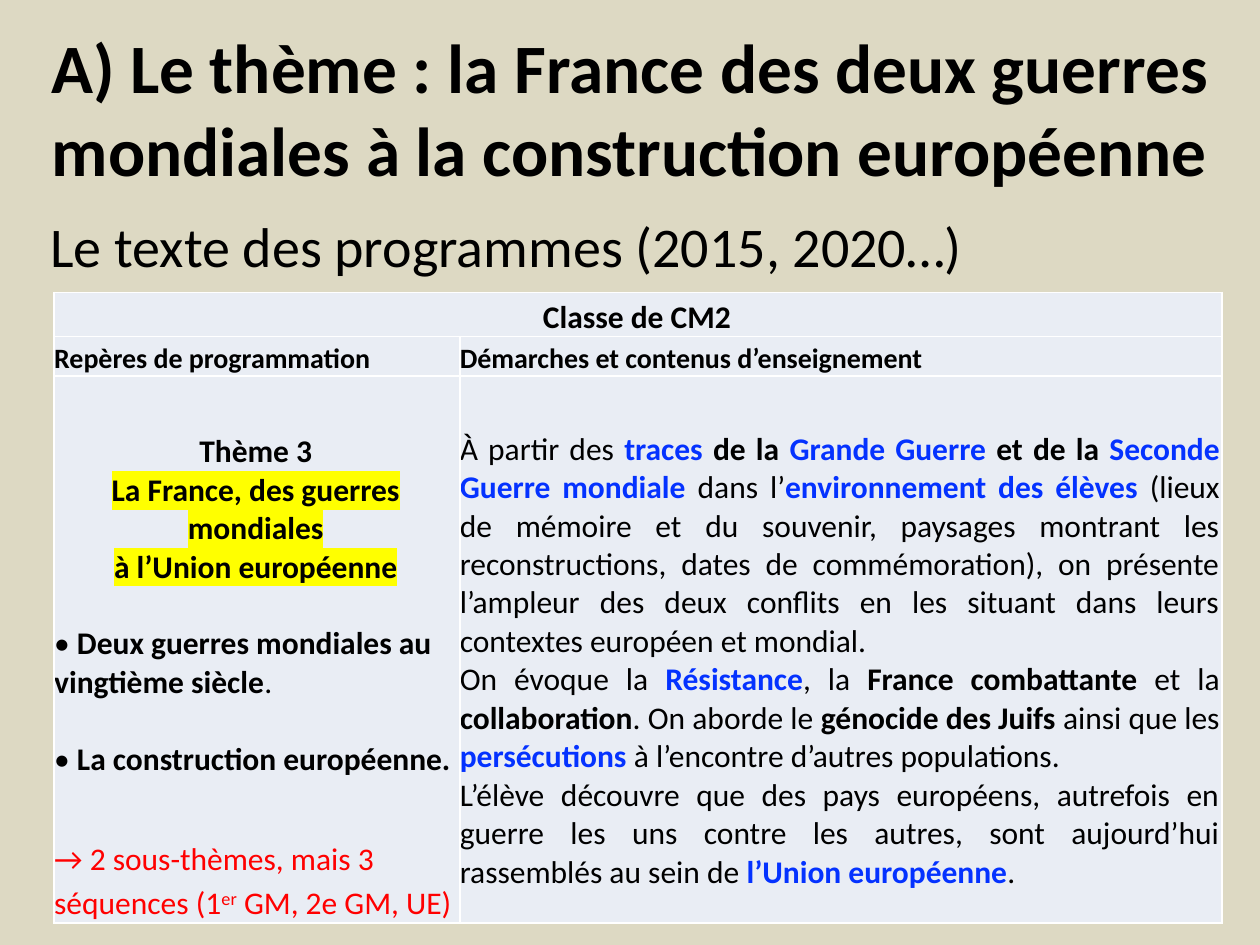
from lxml.etree import SubElement
from pptx import Presentation
from pptx.dml.color import RGBColor
from pptx.enum.text import MSO_ANCHOR, MSO_AUTO_SIZE, PP_ALIGN
from pptx.oxml import parse_xml
from pptx.oxml.ns import nsdecls, qn
from pptx.util import Inches, Pt

FONT = "Calibri"
SAND = RGBColor(0xDD, 0xD9, 0xC3)
PALE = RGBColor(0xE9, 0xED, 0xF4)
BLACK = RGBColor(0, 0, 0)
BLUE = RGBColor(0x04, 0x32, 0xFF)
RED = RGBColor(0xFF, 0, 0)
WHITE, YELLOW = "FFFFFF", "FFFF00"

# Run styles: colour, bold
PLAIN, BOLD = (BLACK, False), (BLACK, True)
KEY, NOTE = (BLUE, True), (RED, False)

LEFT, MID, JUST = PP_ALIGN.LEFT, PP_ALIGN.CENTER, PP_ALIGN.JUSTIFY

# Paragraphs: alignment, space before, line spacing, runs
THEME = [
    (MID, 0, 1, [("Thème 3", BOLD)]),
    (MID, 0, 1, [("La France, des guerres mondiales", BOLD, "mark")]),
    (MID, 0, 1, [("à l’Union européenne", BOLD, "mark")]),
    (LEFT, 22, 1, [("• ", PLAIN),
                   ("Deux guerres mondiales au vingtième siècle", BOLD),
                   (".", PLAIN)]),
    (LEFT, 22, 1, [("• ", PLAIN), ("La construction européenne.", BOLD)]),
    (LEFT, 32, 1.15, [("→ 2 sous-thèmes, mais 3 séquences (1", NOTE),
                      ("er", NOTE, "super"), (" GM, 2e GM, UE)", NOTE)]),
]
CONTENT = [
    (JUST, 0, 1, [
        ("À partir des ", PLAIN), ("traces", KEY), (" de la ", BOLD),
        ("Grande Guerre ", KEY), ("et de la ", BOLD),
        ("Seconde Guerre mondiale ", KEY), ("dans l’", PLAIN),
        ("environnement des élèves ", KEY),
        ("(lieux de mémoire et du souvenir, paysages montrant les "
         "reconstructions, dates de commémoration), on présente l’ampleur "
         "des deux conflits en les situant dans leurs contextes européen "
         "et mondial. ", PLAIN)]),
    (JUST, 0, 1, [
        ("On évoque la ", PLAIN), ("Résistance", KEY), (", la ", PLAIN),
        ("France combattante", BOLD), (" et la ", PLAIN),
        ("collaboration", BOLD), (". On aborde le ", PLAIN),
        ("génocide des Juifs ", BOLD), ("ainsi que les ", PLAIN),
        ("persécutions", KEY),
        (" à l’encontre d’autres populations.", PLAIN)]),
    (JUST, 0, 1, [
        ("L’élève découvre que des pays européens, autrefois en guerre les "
         "uns contre les autres, sont aujourd’hui rassemblés au sein de ",
         PLAIN),
        ("l’Union européenne", KEY), (". ", PLAIN)]),
]


def style(run, size, look, extra=None):
    font = run.font
    font.name, font.size = FONT, Pt(size)
    font.color.rgb, font.bold = look
    props = run._r.get_or_add_rPr()
    if extra == "super":
        props.set("baseline", "30000")
    elif extra == "mark":
        mark = parse_xml(f'<a:highlight {nsdecls("a")}>'
                         f'<a:srgbClr val="{YELLOW}"/></a:highlight>')
        props.find(qn("a:solidFill")).addnext(mark)


def place(shape, box):
    shape.left, shape.top, shape.width, shape.height = map(Inches, box)


def add_head(slide, box):
    title = slide.shapes.title
    place(title, box)
    frame = title.text_frame
    frame.text = ("A) Le thème : la France des deux guerres mondiales "
                  "à la construction européenne")
    frame.auto_size = MSO_AUTO_SIZE.NONE
    frame.vertical_anchor = MSO_ANCHOR.MIDDLE
    frame.paragraphs[0].alignment = MID
    style(frame.paragraphs[0].runs[0], 39.6, BOLD)


def add_lead(slide, box):
    body = slide.placeholders[1]
    place(body, box)
    frame = body.text_frame
    frame.text = "Le texte des programmes (2015, 2020…)"
    frame.auto_size = MSO_AUTO_SIZE.NONE
    para = frame.paragraphs[0]
    props = para._p.get_or_add_pPr()
    props.set("marL", "0")
    props.set("indent", "0")
    SubElement(props, qn("a:buNone"))
    style(para.runs[0], 32, PLAIN)


def dress(cell):
    """Give a cell its fill, margins and white borders."""
    cell.fill.solid()
    cell.fill.fore_color.rgb = PALE
    cell.margin_left = cell.margin_top = cell.margin_bottom = 0
    cell.margin_right = Inches(0.02)
    props = cell._tc.get_or_add_tcPr()
    for i, side in enumerate("LRTB"):
        props.insert(i, parse_xml(
            f'<a:ln{side} {nsdecls("a")} w="{Pt(1)}"><a:solidFill>'
            f'<a:srgbClr val="{WHITE}"/></a:solidFill></a:ln{side}>'))


def write(cell, size, paras):
    frame = cell.text_frame
    for i, (align, gap, line, runs) in enumerate(paras):
        para = frame.add_paragraph() if i else frame.paragraphs[0]
        para.alignment, para.line_spacing = align, line
        para.space_before = Pt(gap)
        for text, *look in runs:
            run = para.add_run()
            run.text = text
            style(run, size, *look)


def add_grid(slide, box):
    grid = slide.shapes.add_table(3, 2, *map(Inches, box)).table
    for col, width in zip(grid.columns, (3.22, 6.05)):
        col.width = Inches(width)
    for row, height in zip(grid.rows, (0.35, 0.31, 4.3)):
        row.height = Inches(height)
    for cell in grid.iter_cells():
        dress(cell)
    grid.cell(0, 0).merge(grid.cell(0, 1))
    write(grid.cell(0, 0), 18, [(MID, 0, 1.15, [("Classe de CM2", BOLD)])])
    heads = "Repères de programmation", "Démarches et contenus d’enseignement"
    parts = (THEME, 0.45), (CONTENT, 0.43)
    for i, (head, (paras, top)) in enumerate(zip(heads, parts)):
        write(grid.cell(1, i), 16, [(LEFT, 0, 1.15, [(head, BOLD)])])
        cell = grid.cell(2, i)
        cell.margin_top = Inches(top)
        write(cell, 18, paras)


def main():
    deck = Presentation()
    deck.slide_width, deck.slide_height = Inches(10), Inches(7.5)
    slide = deck.slides.add_slide(deck.slide_layouts[1])
    back = slide.background.fill
    back.solid()
    back.fore_color.rgb = SAND
    add_head(slide, (0, 0.43, 10, 0.85))
    add_lead(slide, (0.3, 1.63, 9, 0.94))
    add_grid(slide, (0.43, 2.32, 9.27, 4.95))
    deck.save("out.pptx")


if __name__ == "__main__":
    main()
